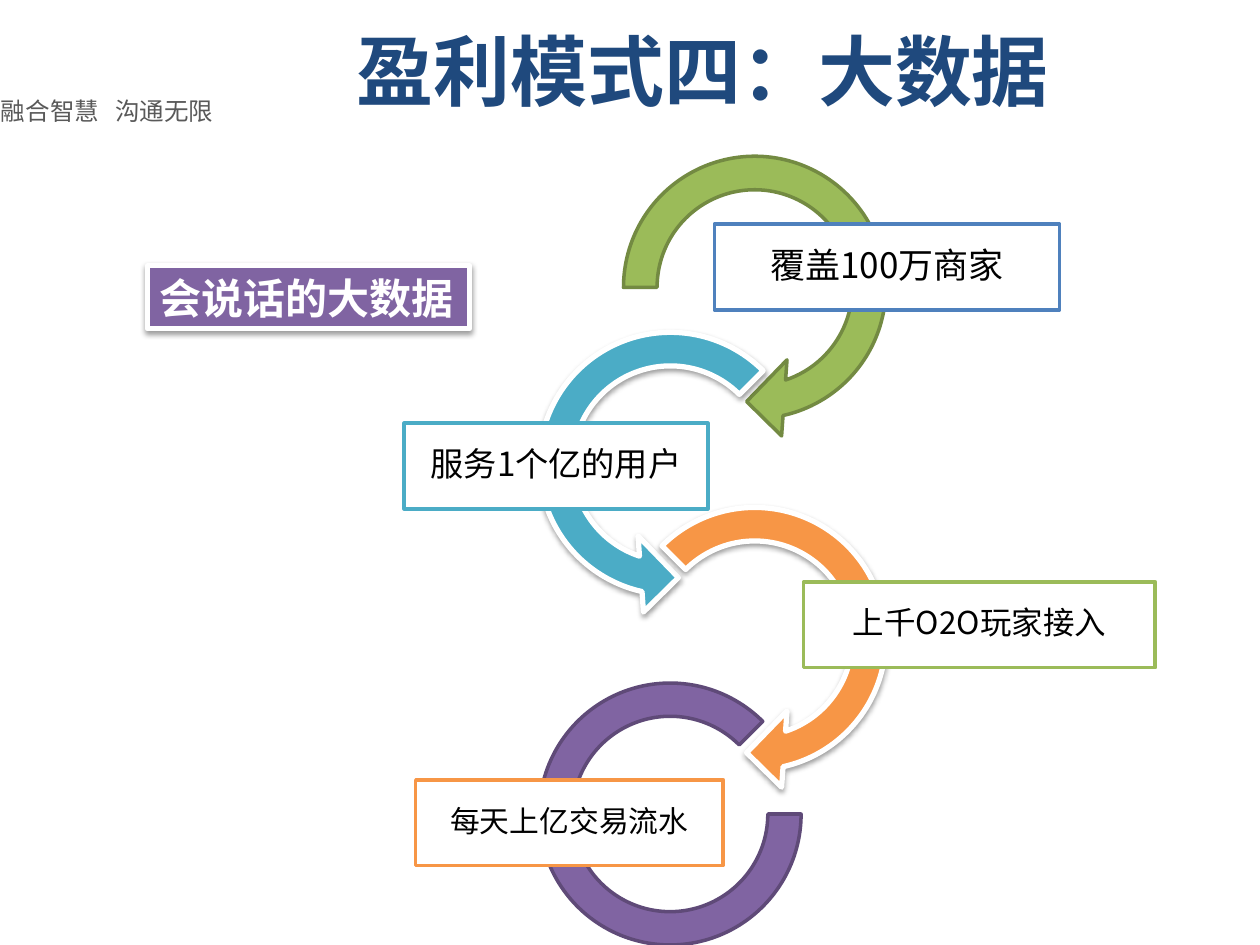
"""Build the slide on the fourth profit model, big data."""
from dataclasses import dataclass

from lxml.etree import SubElement
from pptx import Presentation
from pptx.dml.color import RGBColor
from pptx.enum.shapes import MSO_SHAPE as Preset
from pptx.enum.text import MSO_ANCHOR as Anchor, PP_ALIGN as Align
from pptx.oxml.ns import qn
from pptx.util import Cm, Pt


@dataclass(frozen=True)
class Theme:
    """Fonts, colours and type sizes of the slide."""
    font: str = "Noto Sans CJK SC"
    tagline_font: str = "Noto Sans CJK JP"
    navy: str = "1F497D"
    grey: str = "595959"
    black: str = "000000"
    white: str = "FFFFFF"
    blue: str = "4F81BD"
    green: str = "9BBB59"
    dark_green: str = "738A42"
    teal: str = "4BACC6"
    orange: str = "F79646"
    purple: str = "8064A2"
    dark_purple: str = "5F4A78"
    title_size: int = 44
    banner_size: int = 24
    tagline_size: int = 14


THEME = Theme()


def write_text(box, text, *, size, color, font=THEME.font, bold=False,
               align=Align.LEFT, anchor=Anchor.MIDDLE, wrap=True,
               spacing=None, inset=None, tab=None):
    """Write one formatted paragraph into a shape."""
    frame = box.text_frame
    frame.word_wrap = wrap
    frame.vertical_anchor = anchor
    if inset is not None:
        frame.margin_left = frame.margin_right = Cm(inset)
        frame.margin_top = frame.margin_bottom = Cm(inset)
    para = frame.paragraphs[0]
    para.alignment = align
    if spacing:
        para.line_spacing = spacing
    if tab:
        tabs = SubElement(para._p.get_or_add_pPr(), qn("a:tabLst"))
        SubElement(tabs, qn("a:tab"), pos=str(Cm(tab)), algn="l")
    span = para.add_run()
    span.text = text
    span.font.size = Pt(size)
    span.font.bold = bold
    span.font.color.rgb = RGBColor.from_string(color)
    span.font.name = font
    SubElement(span._r.get_or_add_rPr(), qn("a:ea"), typeface=font)


def add_soft_shadow(shape):
    """Give a shape a soft shadow that falls straight down."""
    effects = shape.element.spPr.find(qn("a:effectLst"))
    shadow = SubElement(effects, qn("a:outerShdw"), blurRad=str(Pt(3.1)),
                        dist=str(Pt(1.6)), dir="5400000", rotWithShape="0")
    color = SubElement(shadow, qn("a:srgbClr"), val=THEME.black)
    SubElement(color, qn("a:alpha"), val="38000")


def add_figure(page, preset, left, top, width, height, *, fill, line,
               weight=2, adjust=(), shadow=False):
    """Add a filled and outlined preset shape."""
    shape = page.shapes.add_shape(preset, Cm(left), Cm(top), Cm(width), Cm(height))
    for index, value in enumerate(adjust):
        shape.adjustments[index] = value
    shape.shadow.inherit = False
    shape.fill.solid()
    shape.fill.fore_color.rgb = RGBColor.from_string(fill)
    shape.line.color.rgb = RGBColor.from_string(line)
    shape.line.width = Pt(weight)
    if shadow:
        add_soft_shadow(shape)
    return shape


def add_arc(page, preset, left, top, size, fill, line, adjust):
    """Add a ring piece; a white outline comes with a shadow."""
    raised = line == THEME.white
    add_figure(page, preset, left, top, size, size, fill=fill, line=line,
               weight=3 if raised else 2, adjust=adjust, shadow=raised)


def add_label(page, left, top, width, line, text, size):
    """Add a white outlined box with a centred statement."""
    box = add_figure(page, Preset.RECTANGLE, left, top, width, 1.73,
                     fill=THEME.white, line=line)
    write_text(box, text, size=size, color=THEME.black, align=Align.CENTER,
               spacing=0.9, inset=0.03)


def add_title(page, text):
    """Place and fill the title placeholder."""
    title = page.shapes.title
    title.left, title.top = Cm(2.74), Cm(0.56)
    title.width, title.height = Cm(22.86), Cm(3.18)
    write_text(title, text, size=THEME.title_size, color=THEME.navy, bold=True,
               align=Align.CENTER, anchor=Anchor.TOP, spacing=0.9)


def add_tagline(page, text):
    """Add the two-part tagline at the left edge."""
    box = page.shapes.add_textbox(Cm(-0.23), Cm(1.8), Cm(5.36), Cm(0.86))
    write_text(box, text, size=THEME.tagline_size, color=THEME.grey,
               font=THEME.tagline_font, tab=2.3)


def add_banner(page, text):
    """Add the raised purple banner."""
    box = add_figure(page, Preset.RECTANGLE, 2.97, 5.36, 6.5, 1.27,
                     fill=THEME.purple, line=THEME.white, weight=3, shadow=True)
    write_text(box, text, size=THEME.banner_size, color=THEME.white, bold=True,
               wrap=False)


def add_chain(page):
    """Add the four linked arcs, each with its statement."""
    arrow, left_arrow = Preset.CIRCULAR_ARROW, Preset.LEFT_CIRCULAR_ARROW
    head = (0.11, 11.423)
    size = 6.15
    links = (
        ((arrow, 12.14, 2.72, size, THEME.green, THEME.dark_green,
          (*head, 45, 108, 0.125)),
         (14.4, 4.52, 6.96, THEME.blue, "覆盖100万商家", 20)),
        ((left_arrow, 10.44, 6.27, size, THEME.teal, THEME.white,
          (*head, 63, 189, 0.125)),
         (8.15, 8.53, 6.12, THEME.teal, "服务1个亿的用户", 19)),
        ((arrow, 12.14, 9.8, size, THEME.orange, THEME.white,
          (*head, 45, 135, 0.125)),
         (16.2, 11.73, 7.09, THEME.green, "上千O2O玩家接入", 18)),
        ((Preset.BLOCK_ARC, 10.87, 13.77, 5.28, THEME.purple, THEME.dark_purple,
          (0, 189, 0.127)),
         (8.38, 15.72, 6.2, THEME.orange, "每天上亿交易流水", 17)),
    )
    for arc, label in links:
        add_arc(page, *arc)
        add_label(page, *label)


def main():
    """Build and save the deck."""
    deck = Presentation()
    deck.slide_width, deck.slide_height = Cm(25.4), Cm(19.05)
    page = deck.slides.add_slide(deck.slide_layouts[5])
    add_tagline(page, "融合智慧\t沟通无限")
    add_title(page, "盈利模式四：大数据")
    add_chain(page)
    add_banner(page, "会说话的大数据")
    deck.save("out.pptx")


if __name__ == "__main__":
    main()
